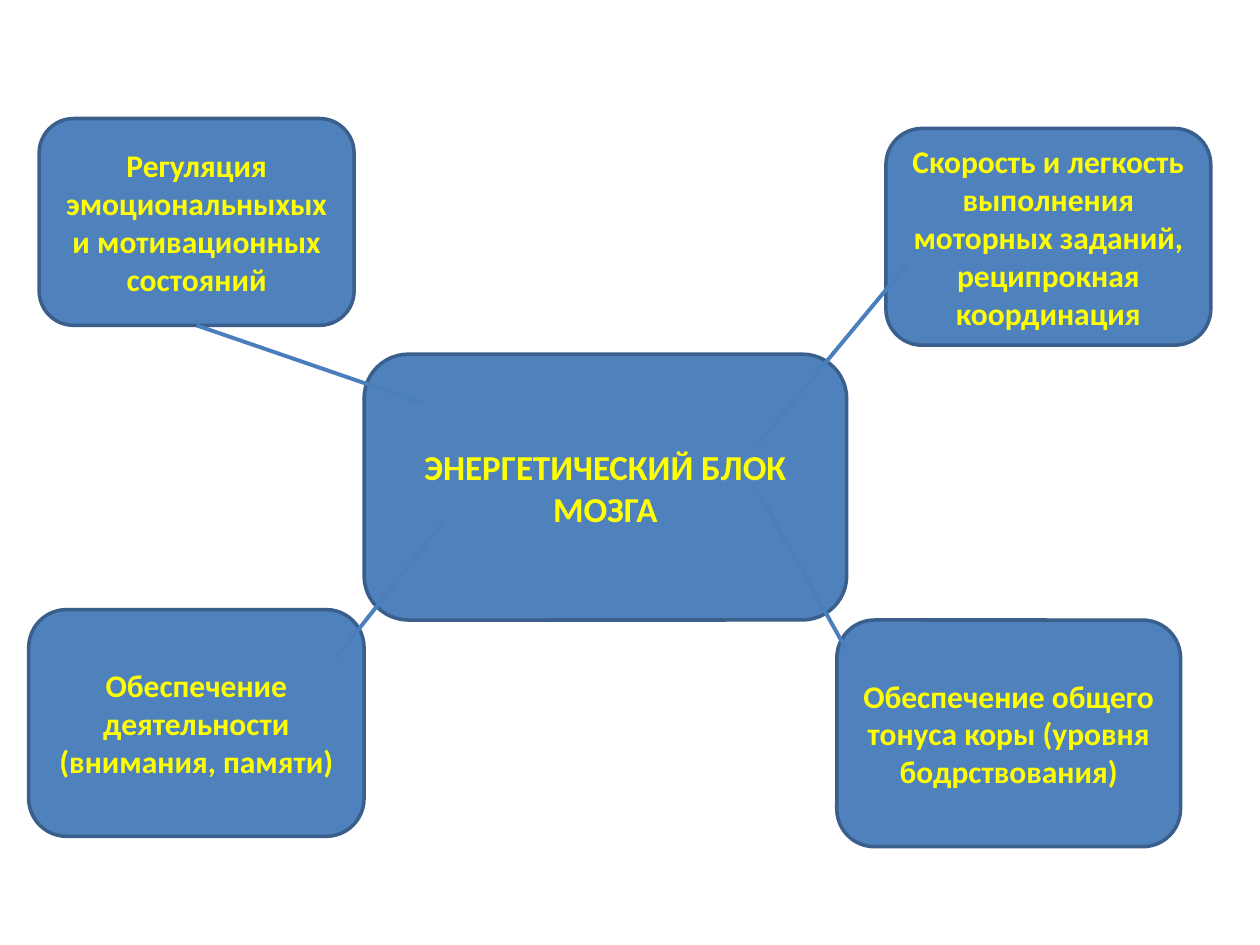
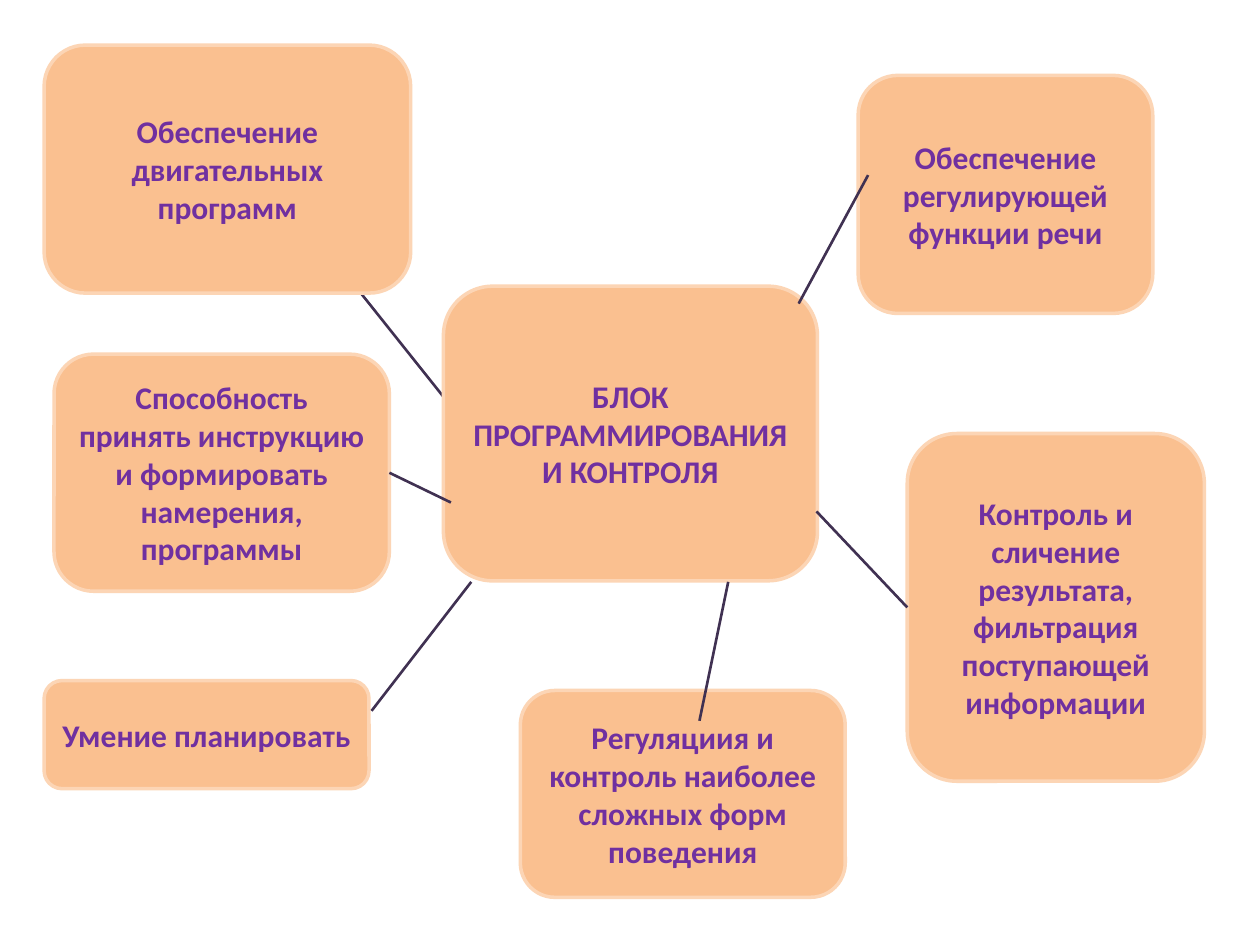
from dataclasses import dataclass

from lxml import etree
from pptx import Presentation
from pptx.dml.color import RGBColor
from pptx.enum.shapes import MSO_CONNECTOR, MSO_SHAPE
from pptx.enum.text import MSO_ANCHOR, PP_ALIGN
from pptx.oxml.ns import qn
from pptx.util import Cm, Pt

ROUNDED = MSO_SHAPE.ROUNDED_RECTANGLE
STRAIGHT = MSO_CONNECTOR.STRAIGHT
MIDDLE = MSO_ANCHOR.MIDDLE
CENTER = PP_ALIGN.CENTER

BLUE = RGBColor(0x4F, 0x81, 0xBD)
DARK_BLUE = RGBColor(0x3A, 0x5F, 0x8C)
LINK_BLUE = RGBColor(0x4B, 0x7E, 0xBC)
YELLOW = RGBColor(0xFF, 0xFF, 0x00)
ORANGE = RGBColor(0xFA, 0xC0, 0x90)
PALE_ORANGE = RGBColor(0xFC, 0xD5, 0xB5)
PURPLE = RGBColor(0x70, 0x30, 0xA0)
DARK_PURPLE = RGBColor(0x40, 0x31, 0x52)

FONT = "Calibri"
BLANK_LAYOUT = 6
LEFT, BOTTOM, RIGHT = 1, 2, 3  # connection sites of a rectangle


@dataclass
class Style:
    fill: RGBColor
    outline: RGBColor
    text: RGBColor
    link: RGBColor
    link_width: float


BLUE_STYLE = Style(BLUE, DARK_BLUE, YELLOW, LINK_BLUE, 2.25)
ORANGE_STYLE = Style(ORANGE, PALE_ORANGE, PURPLE, DARK_PURPLE, 1.5)


class MindMap:
    def __init__(self, presentation, style):
        layout = presentation.slide_layouts[BLANK_LAYOUT]
        self.slide = presentation.slides.add_slide(layout)
        self.style = style

    def box(self, text, left, top, width, height, size=18):
        shape = self.slide.shapes.add_shape(
            ROUNDED, Cm(left), Cm(top), Cm(width), Cm(height))
        shape.shadow.inherit = False
        shape.fill.solid()
        shape.fill.fore_color.rgb = self.style.fill
        shape.line.color.rgb = self.style.outline
        shape.line.width = Pt(2)
        frame = shape.text_frame
        frame.word_wrap = True
        frame.vertical_anchor = MIDDLE
        paragraph = frame.paragraphs[0]
        paragraph.text = text
        paragraph.alignment = CENTER
        font = paragraph.font
        font.name, font.size, font.bold = FONT, Pt(size), True
        font.color.rgb = self.style.text
        return shape

    def link(self, start, end, begin_at=None, end_at=None):
        """Draw a line; begin_at and end_at are (shape, site) pairs to join."""
        connector = self.slide.shapes.add_connector(
            STRAIGHT, *(Cm(length) for length in (*start, *end)))
        connector.line.color.rgb = self.style.link
        connector.line.width = Pt(self.style.link_width)
        etree.SubElement(connector._element.spPr, qn("a:effectLst"))
        if begin_at:
            connector.begin_connect(*begin_at)
        if end_at:
            connector.end_connect(*end_at)


def add_energy_block(presentation):
    mind_map = MindMap(presentation, BLUE_STYLE)
    regulation = mind_map.box(
        "Регуляция эмоциональныхых и мотивационных состояний",
        0.79, 2.39, 6.35, 4.17)
    mind_map.box(
        "Скорость и легкость выполнения моторных заданий, "
        "реципрокная координация", 17.86, 2.59, 6.55, 4.37)
    mind_map.box("Обеспечение деятельности (внимания, памяти)",
                 0.58, 12.29, 6.76, 4.57)
    mind_map.box("Обеспечение общего тонуса коры (уровня бодрствования)",
                 16.87, 12.5, 6.93, 4.57)
    mind_map.box("ЭНЕРГЕТИЧЕСКИЙ БЛОК МОЗГА", 7.34, 7.14, 9.73, 5.36, size=20)

    mind_map.link((15.29, 9.93), (17.07, 13.11))
    mind_map.link((3.96, 6.56), (8.53, 8.13), begin_at=(regulation, BOTTOM))
    mind_map.link((6.76, 13.28), (8.94, 10.52))
    mind_map.link((18.26, 5.36), (15.29, 8.94))


def add_programming_block(presentation):
    mind_map = MindMap(presentation, ORANGE_STYLE)
    mind_map.link((6.35, 4.75), (9.53, 8.74))  # lies behind the boxes
    mind_map.box("БЛОК ПРОГРАММИРОВАНИЯ И КОНТРОЛЯ", 8.94, 5.77, 7.54, 5.94)
    mind_map.box("Обеспечение двигательных программ", 0.89, 0.91, 7.39, 5)
    instruction = mind_map.box(
        "Способность принять инструкцию и формировать намерения, программы",
        1.09, 7.14, 6.76, 4.78)
    mind_map.box("Умение планировать", 0.89, 13.72, 6.55, 2.18)
    mind_map.box("Регуляциия и контроль наиболее сложных форм поведения",
                 10.49, 13.92, 6.55, 4.17)
    control = mind_map.box(
        "Контроль и сличение результата, фильтрация поступающей информации",
        18.29, 8.74, 5.99, 7.01)
    mind_map.box("Обеспечение регулирующей функции речи",
                 17.3, 1.52, 5.94, 4.8)

    mind_map.link((7.85, 9.53), (9.09, 10.13), begin_at=(instruction, RIGHT))
    mind_map.link((7.49, 14.33), (9.5, 11.73))
    mind_map.link((14.1, 14.53), (14.68, 11.73))
    mind_map.link((16.1, 6.12), (17.5, 3.53))
    mind_map.link((16.46, 10.31), (18.29, 12.25), end_at=(control, LEFT))


def main():
    presentation = Presentation()
    presentation.slide_width = Cm(25.4)
    presentation.slide_height = Cm(19.05)
    add_energy_block(presentation)
    add_programming_block(presentation)
    presentation.save("out.pptx")


if __name__ == "__main__":
    main()
